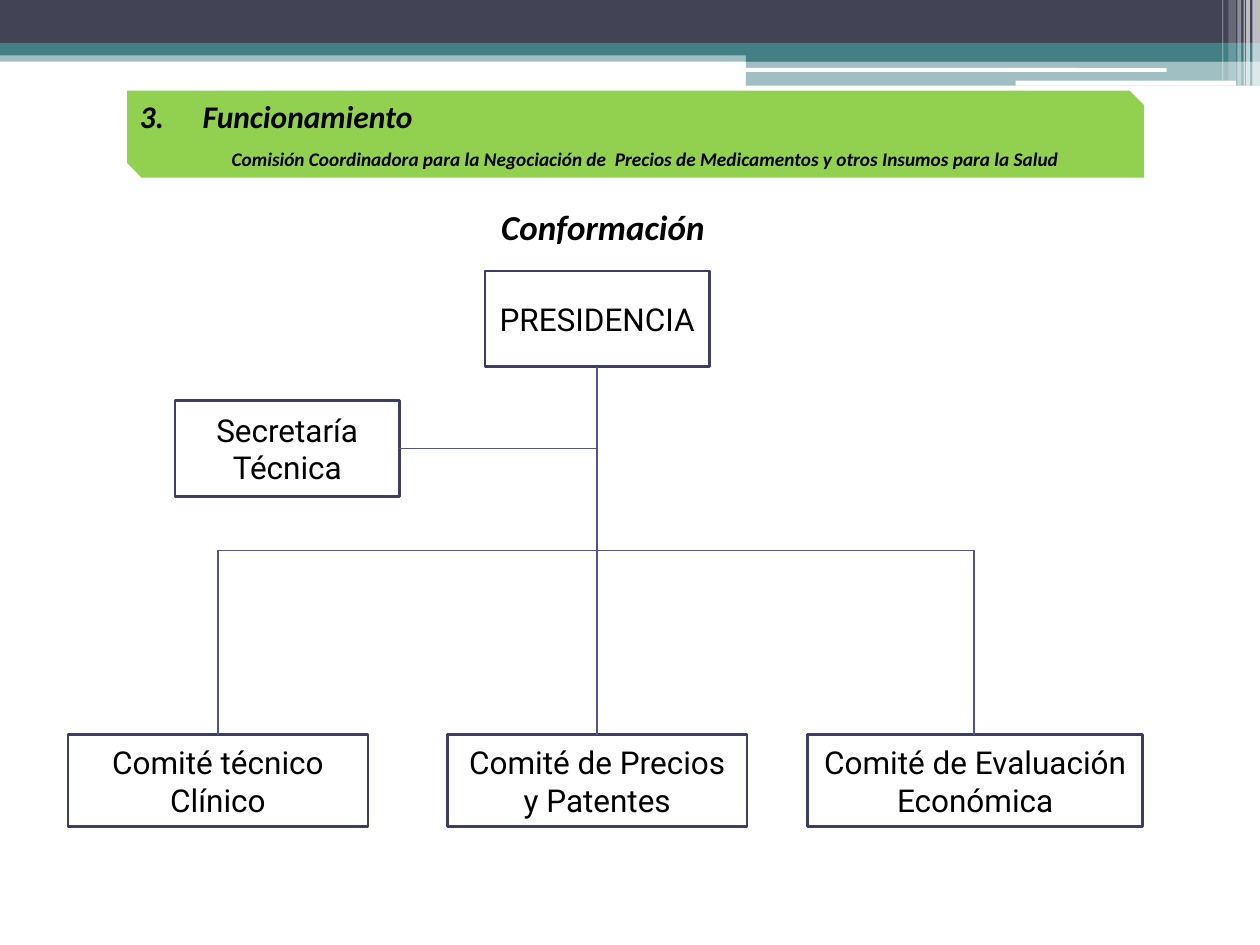
import pptx
import pptx.util
import pptx.dml.color
import pptx.enum.shapes
import pptx.enum.text
import lxml.etree
from pptx.util import Inches

RGBColor = pptx.dml.color.RGBColor
SHAPE = pptx.enum.shapes.MSO_SHAPE
CONNECTOR = pptx.enum.shapes.MSO_CONNECTOR
ALIGN = pptx.enum.text.PP_ALIGN
ANCHOR = pptx.enum.text.MSO_ANCHOR
qn = pptx.oxml.ns.qn

WHITE = RGBColor(0xFF, 0xFF, 0xFF)
BLACK = RGBColor(0x00, 0x00, 0x00)
SLATE = RGBColor(0x42, 0x44, 0x56)
TEAL = RGBColor(0x43, 0x80, 0x86)
GREEN = RGBColor(0x92, 0xD0, 0x50)
BORDER = RGBColor(0x3D, 0x3E, 0x66)
LINK = RGBColor(0x53, 0x54, 0x8A)


def add_shape(kind, x, y, w, h, color=None, alpha=100):
    s = slide.shapes.add_shape(kind, Inches(x), Inches(y), Inches(w), Inches(h))
    s.shadow.inherit = False
    s.line.fill.background()
    if color is None:
        s.fill.background()
        return s
    s.fill.solid()
    s.fill.fore_color.rgb = color
    if alpha < 100:
        clr = s.fill._xPr.find(qn("a:solidFill"))[0]
        lxml.etree.SubElement(clr, qn("a:alpha"), val=str(alpha * 1000))
    return s


def write(s, text, size=18, font="Calibri", bold=True, align=ALIGN.CENTER,
          anchor=ANCHOR.TOP, wrap=True):
    tf = s.text_frame
    tf.word_wrap = wrap
    tf.vertical_anchor = anchor
    p = tf.paragraphs[0]
    p.alignment = align
    r = p.add_run()
    r.text = text
    r.font.size = pptx.util.Pt(size)
    r.font.name = font
    r.font.bold = r.font.italic = bold
    r.font.color.rgb = BLACK
    return p


prs = pptx.Presentation()
prs.slide_width = Inches(10)
prs.slide_height = Inches(7.5)
slide = prs.slides.add_slide(prs.slide_layouts[6])

for x, y, w, h, color, alpha in [
    (0, 0.4, 10, 0.09, TEAL, 50),
    (0, 0, 10, 0.34, SLATE, 100),
    (0, 0.34, 10, 0.1, TEAL, 100),
    (5.92, 0.39, 4.08, 0.1, TEAL, 100),
    (5.92, 0.48, 4.08, 0.2, TEAL, 50),
]:
    add_shape(SHAPE.RECTANGLE, x, y, w, h, color, alpha)

for x, y, w, h in [(5.91, 0.54, 3.35, 0.03), (8.06, 0.64, 1.75, 0.04)]:
    add_shape(SHAPE.ROUNDED_RECTANGLE, x, y, w, h, WHITE)

for x, w, h, alpha in [
    (9.94, 0.06, 0.68, 65),
    (9.89, 0.03, 0.68, 65),
    (9.87, 0.01, 0.68, 60),
    (9.82, 0.03, 0.68, 40),
    (9.75, 0.06, 0.64, 20),
    (9.7, 0.01, 0.64, 30),
]:
    add_shape(SHAPE.RECTANGLE, x, 0, w, h, WHITE, alpha)

s = slide.shapes.add_textbox(Inches(1.66), Inches(1.58), Inches(6.25), Inches(0.44))
write(s, "Conformación", size=20)

for text, x, y, w, h in [
    ("PRESIDENCIA", 3.85, 2.15, 1.78, 0.76),
    ("Comité técnico Clínico", 0.54, 5.83, 2.38, 0.73),
    ("Comité de Precios y Patentes", 3.55, 5.83, 2.38, 0.73),
    ("Comité de Evaluación Económica", 6.41, 5.83, 2.66, 0.73),
    ("Secretaría Técnica", 1.39, 3.18, 1.78, 0.76),
]:
    s = add_shape(SHAPE.RECTANGLE, x, y, w, h)
    s.line.color.rgb = BORDER
    s.line.width = pptx.util.Pt(1.5)
    write(s, text, font="Roboto", bold=False, anchor=ANCHOR.MIDDLE)

trunk, top, bottom = 4.74, 2.91, 5.83
links = []
for x in (1.73, trunk, 7.73):
    cx, cy = (trunk + x) / 2, (top + bottom) / 2
    side = 1 if x < trunk else -1
    dx, dy = side * (bottom - top) / 2, abs(trunk - x) / 2
    c = slide.shapes.add_connector(CONNECTOR.ELBOW, Inches(cx - dx), Inches(cy - dy),
                                   Inches(cx + dx), Inches(cy + dy))
    c._element.spPr.find(qn("a:xfrm")).set("rot", "5400000" if side > 0 else "16200000")
    links.append(c)

c = slide.shapes.add_connector(CONNECTOR.ELBOW, Inches(3.17), Inches(3.56),
                               Inches(trunk), Inches(top))
c._element.spPr.find(qn("a:prstGeom")).set("prst", "bentConnector2")
links.append(c)

for c in links:
    c.line.color.rgb = LINK
    c.line.width = pptx.util.Pt(0.75)
    lxml.etree.SubElement(c._element.spPr, qn("a:effectLst"))

add_shape(SHAPE.SNIP_2_DIAG_RECTANGLE, 1.01, 0.72, 8.07, 0.69, GREEN)

s = slide.shapes.add_textbox(Inches(1.5), Inches(1.12), Inches(7.25), Inches(0.29))
write(s, "Comisión Coordinadora para la Negociación de  Precios de Medicamentos "
         "y otros Insumos para la Salud", size=11)

s = slide.shapes.add_textbox(Inches(1.01), Inches(0.72), Inches(2.39), Inches(0.4))
p = write(s, "Funcionamiento", align=ALIGN.LEFT, wrap=False)
pPr = p._p.get_or_add_pPr()
pPr.set("marL", str(Inches(0.5)))
pPr.set("indent", str(Inches(-0.5)))
lxml.etree.SubElement(pPr, qn("a:buAutoNum"), type="arabicPeriod", startAt="3")

prs.save("out.pptx")
